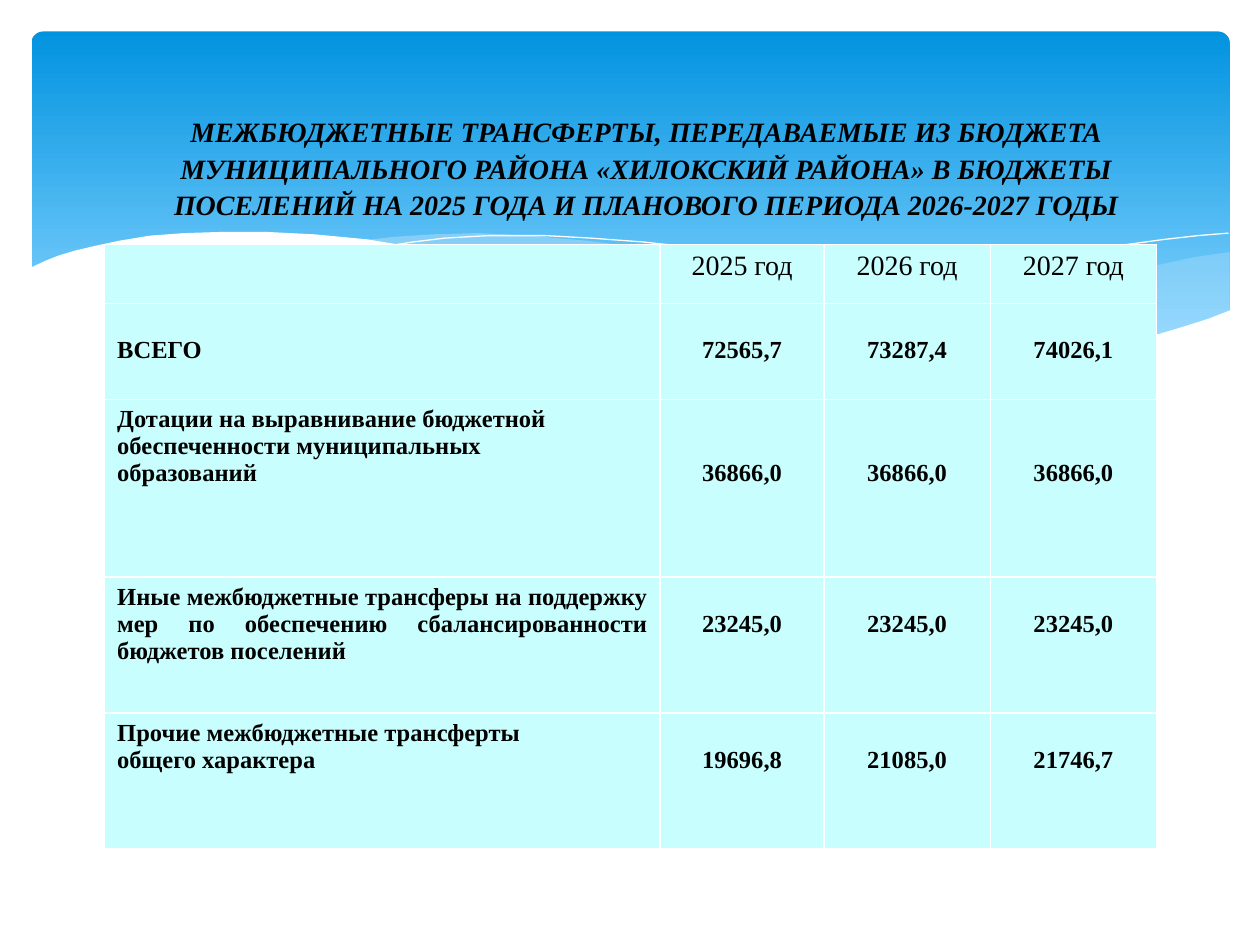
import pptx
import pptx.util
import pptx.dml.color
import pptx.enum.shapes
import pptx.enum.text
import pptx.oxml
from pptx.oxml.ns import nsdecls, qn

Inches, Pt = pptx.util.Inches, pptx.util.Pt
ALIGN = pptx.enum.text.PP_ALIGN
FONT = "Times New Roman"
CELL_FILL = "C8FEFD"
WAVE_FILL = "C6E7FC"

TITLE = ("МЕЖБЮДЖЕТНЫЕ ТРАНСФЕРТЫ, ПЕРЕДАВАЕМЫЕ ИЗ БЮДЖЕТА МУНИЦИПАЛЬНОГО РАЙОНА "
         "«ХИЛОКСКИЙ РАЙОНА» В БЮДЖЕТЫ ПОСЕЛЕНИЙ НА 2025 ГОДА И ПЛАНОВОГО ПЕРИОДА "
         "2026-2027 ГОДЫ")

HEADER = ["", "2025 год", "2026 год", "2027 год"]
# row height, lines above the label, lines above the values, texts
ROWS = [
    (0.47, 0, 0, HEADER),
    (0.76, 1, 1, ["ВСЕГО", "72565,7", "73287,4", "74026,1"]),
    (1.41, 0, 2, ["Дотации на выравнивание бюджетной\nобеспеченности муниципальных\nобразований",
                  "36866,0", "36866,0", "36866,0"]),
    (1.08, 0, 1, ["Иные межбюджетные трансферы на поддержку мер по обеспечению "
                  "сбалансированности бюджетов поселений",
                  "23245,0", "23245,0", "23245,0"]),
    (1.08, 0, 1, ["Прочие межбюджетные трансферты\nобщего характера",
                  "19696,8", "21085,0", "21746,7"]),
]
COL_WIDTHS = [4.41, 1.3, 1.32, 1.32]
LINE_HEIGHT = 0.215

# Outlines in inches
RIGHT_WAVE = [
    (9.76, 2), (9.48, 2.04), (9.21, 2.1), (8.91, 2.16), (8.61, 2.23), (8.05, 2.37),
    (7.53, 2.48), (7.06, 2.57), (6.61, 2.65), (6.91, 2.69), (7.19, 2.72), (7.45, 2.75),
    (7.69, 2.77), (8.03, 2.78), (8.35, 2.77), (8.63, 2.75), (8.89, 2.72), (9.13, 2.67),
    (9.35, 2.62), (9.49, 2.57), (9.63, 2.52), (9.76, 2.47)]
MIDDLE_WAVE = [
    (8.93, 2.73), (8.66, 2.69), (8.37, 2.65), (8.07, 2.6), (7.75, 2.54), (7.41, 2.47),
    (7.06, 2.4), (6.68, 2.31), (6.29, 2.22), (5.98, 2.14), (5.69, 2.08), (5.41, 2.03),
    (5.14, 1.98), (4.89, 1.94), (4.65, 1.91), (4.42, 1.89), (4.2, 1.87), (3.8, 1.85),
    (3.44, 1.86), (3.13, 1.88), (2.86, 1.91), (3.23, 1.96), (3.62, 2.03), (4.04, 2.11),
    (4.49, 2.22), (4.91, 2.32), (5.3, 2.4), (5.66, 2.48), (6.01, 2.55), (6.34, 2.61),
    (6.65, 2.66), (6.95, 2.7), (7.22, 2.74), (7.48, 2.76), (7.85, 2.78), (8.28, 2.78),
    (8.67, 2.76)]
LONG_CREST = [
    (3.09, 1.95), (3.28, 1.92), (3.53, 1.89), (3.87, 1.87), (4.33, 1.87), (4.69, 1.89),
    (5.1, 1.92), (5.56, 1.97), (6.08, 2.04), (6.65, 2.13), (6.95, 2.19), (7.27, 2.26),
    (7.6, 2.33), (7.95, 2.41), (8.31, 2.51), (8.69, 2.61), (9.07, 2.72)]
RIGHT_CREST = [
    (6.13, 2.57), (6.53, 2.46), (6.95, 2.35), (7.48, 2.23), (8.06, 2.1), (8.36, 2.04),
    (8.66, 1.99), (8.95, 1.94), (9.24, 1.9), (9.51, 1.87), (9.75, 1.85)]
WHITE_WAVE = [
    (9.77, 2.46), (9.59, 2.53), (9.4, 2.59), (9.2, 2.65), (8.99, 2.69), (8.75, 2.73),
    (8.5, 2.75), (8.23, 2.77), (7.93, 2.76), (7.61, 2.75), (7.26, 2.72), (6.88, 2.68),
    (6.48, 2.62), (6.03, 2.54), (5.55, 2.45), (5.03, 2.33), (4.47, 2.2), (4.18, 2.13),
    (3.91, 2.07), (3.65, 2.02), (3.4, 1.97), (3.16, 1.94), (2.92, 1.9), (2.71, 1.88),
    (2.5, 1.86), (2.11, 1.84), (1.77, 1.84), (1.46, 1.85), (1.19, 1.87), (0.95, 1.91),
    (0.76, 1.95), (0.59, 1.99), (0.46, 2.03), (0.36, 2.07), (0.23, 2.13), (0.23, 3.29),
    (9.77, 3.29)]


def rgb(code):
    return pptx.dml.color.RGBColor.from_string(code)


def add_outline(s, points, fill=None, alpha=100):
    """Draw a filled wave, or an open white crest line when no fill is given."""
    units = [(round(x * 100), round(y * 100)) for x, y in points]
    builder = s.shapes.build_freeform(*units[0], scale=Inches(0.01))
    builder.add_line_segments(units[1:], close=fill is not None)
    sp = builder.convert_to_shape()
    sp.shadow.inherit = False
    if fill is None:
        sp.fill.background()
        sp.line.color.rgb = rgb("FFFFFF")
        sp.line.width = Pt(0)
        return
    sp.line.fill.background()
    sp.fill.solid()
    sp.fill.fore_color.rgb = rgb(fill)
    if alpha < 100:
        color = sp.element.spPr.find(qn("a:solidFill"))[0]
        color.append(pptx.oxml.parse_xml(f'<a:alpha {nsdecls("a")} val="{alpha * 1000}"/>'))


def add_backdrop(s):
    sp = s.shapes.add_shape(pptx.enum.shapes.MSO_SHAPE.ROUNDED_RECTANGLE,
                            Inches(0.25), Inches(0.25), Inches(9.51), Inches(2.7))
    sp.adjustments[0] = 0.034
    sp.shadow.inherit = False
    sp.line.fill.background()
    sp.fill.gradient()
    sp.fill.gradient_angle = 270
    for stop, position, code in zip(sp.fill.gradient_stops, (0, 0.9), ("0293E0", "83D3FE")):
        stop.position = position
        stop.color.rgb = rgb(code)
    add_outline(s, RIGHT_WAVE, WAVE_FILL, 29)
    add_outline(s, MIDDLE_WAVE, WAVE_FILL, 40)
    add_outline(s, LONG_CREST)
    add_outline(s, RIGHT_CREST)
    add_outline(s, WHITE_WAVE, "FFFFFF")


def format_text(tf, size, align, bold, italic=False):
    for p in tf.paragraphs:
        p.alignment = align
        for r in p.runs:
            r.font.name = FONT
            r.font.size = Pt(size)
            r.font.bold = bold
            r.font.italic = italic
            r.font.color.rgb = rgb("000000")


def style_cell(cell):
    tcPr = cell._tc.get_or_add_tcPr()
    for side in "LRTB":
        tcPr.append(pptx.oxml.parse_xml(
            f'<a:ln{side} {nsdecls("a")} w="12700"><a:solidFill>'
            f'<a:srgbClr val="FFFFFF"/></a:solidFill></a:ln{side}>'))
    cell.fill.solid()
    cell.fill.fore_color.rgb = rgb(CELL_FILL)


def add_transfers_table(s):
    table = s.shapes.add_table(len(ROWS), len(COL_WIDTHS), Inches(0.83), Inches(1.94),
                               Inches(sum(COL_WIDTHS)),
                               Inches(sum(row[0] for row in ROWS))).table
    table.first_row = table.horz_banding = False
    for column, width in zip(table.columns, COL_WIDTHS):
        column.width = Inches(width)
    for i, (height, label_lines, value_lines, texts) in enumerate(ROWS):
        table.rows[i].height = Inches(height)
        for j, text in enumerate(texts):
            cell = table.cell(i, j)
            style_cell(cell)
            lines = value_lines if j else label_lines
            cell.margin_top = Inches(0.05 + lines * LINE_HEIGHT)
            cell.text_frame.text = text
            format_text(cell.text_frame, 14 if i else 16,
                        ALIGN.CENTER if j else ALIGN.JUSTIFY, bold=i > 0)


def place_title(s):
    title = s.shapes.title
    title.left, title.top = Inches(0.68), Inches(0.84)
    title.width, title.height = Inches(8.9), Inches(0.91)
    tf = title.text_frame
    tf.text = TITLE
    tf.word_wrap = True
    tf.auto_size = pptx.enum.text.MSO_AUTO_SIZE.NONE
    tf.vertical_anchor = pptx.enum.text.MSO_ANCHOR.TOP
    format_text(tf, 16, ALIGN.CENTER, bold=True, italic=True)
    tf.paragraphs[0].line_spacing = 1.08
    tf.paragraphs[0].space_before = Pt(0)
    s.shapes.element.append(title.element)  # in front of the backdrop


def main():
    prs = pptx.Presentation()
    prs.slide_width, prs.slide_height = Inches(10), Inches(7.5)
    s = prs.slides.add_slide(prs.slide_layouts[5])
    add_backdrop(s)
    add_transfers_table(s)
    place_title(s)
    prs.save("out.pptx")


if __name__ == "__main__":
    main()
